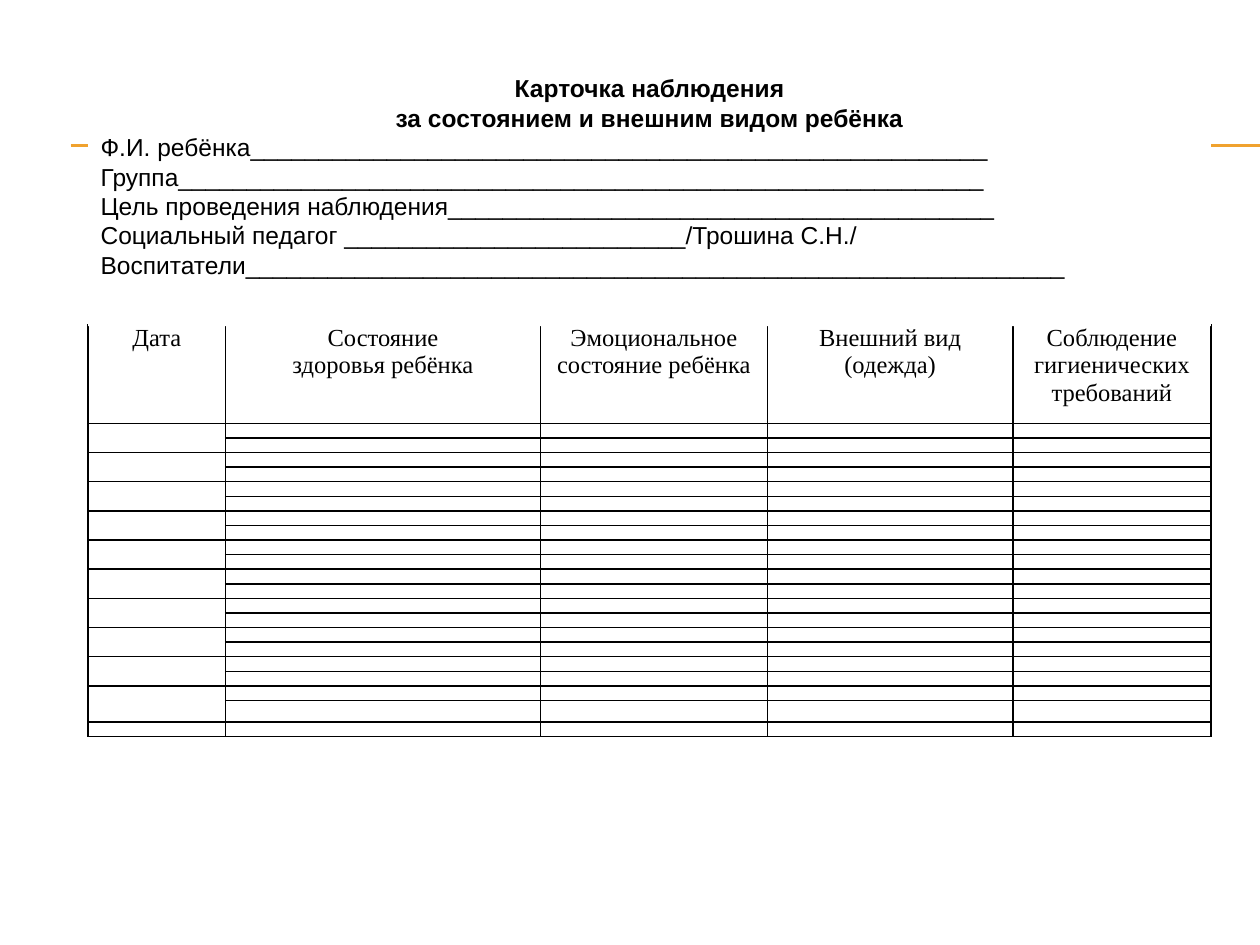
import dataclasses

import pptx
import pptx.dml.color
import pptx.enum.shapes
import pptx.enum.text
import pptx.oxml
import pptx.oxml.ns
import pptx.util

ALIGN = pptx.enum.text.PP_ALIGN


@dataclasses.dataclass(frozen=True)
class Theme:
    paper: str = "FFFFFF"
    ink: str = "000000"
    accent: str = "F0A22E"
    form_font: str = "Arial"
    table_font: str = "Times New Roman"
    text_size: float = 14
    line_pitch: float = 16.8
    empty_size: float = 6.8
    rule_width: float = 0.75
    border_width: float = 1


class CardSlide:
    """Places elements on a grid of 100 columns by 75 rows."""

    def __init__(self, deck, theme):
        self.theme = theme
        self.unit = deck.slide_width / 100
        self.page = deck.slides.add_slide(deck.slide_layouts[6])

    def grid(self, *cells):
        return [pptx.util.Emu(round(cell * self.unit)) for cell in cells]

    def color(self, value):
        return pptx.dml.color.RGBColor.from_string(value)

    def fill(self, target):
        target.fill.solid()
        target.fill.fore_color.rgb = self.color(self.theme.paper)

    def add_text(self, para, text, font, bold=False, align=ALIGN.LEFT):
        para.alignment = align
        span = para.add_run()
        span.text = text
        span.font.name = font
        span.font.size = pptx.util.Pt(self.theme.text_size)
        span.font.bold = bold
        span.font.color.rgb = self.color(self.theme.ink)

    def rule(self, left, right, row):
        line = self.page.shapes.add_connector(
            pptx.enum.shapes.MSO_CONNECTOR.STRAIGHT, *self.grid(left, row, right, row))
        line.line.color.rgb = self.color(self.theme.accent)
        line.line.width = pptx.util.Pt(self.theme.rule_width)
        line._element.spPr.append(pptx.oxml.parse_xml(
            f"<a:effectLst {pptx.oxml.ns.nsdecls('a')}/>"))

    def border(self, cell):
        width = pptx.util.Pt(self.theme.border_width)
        for position, side in enumerate(("lnL", "lnR", "lnT", "lnB")):
            cell._tc.get_or_add_tcPr().insert(position, pptx.oxml.parse_xml(
                f'<a:{side} {pptx.oxml.ns.nsdecls("a")} w="{width}"><a:solidFill>'
                f'<a:srgbClr val="{self.theme.ink}"/></a:solidFill></a:{side}>'))

    def cell(self, cell, lines):
        self.fill(cell)
        self.border(cell)
        cell.margin_left, cell.margin_right = self.grid(0.4, 0.4)
        cell.margin_top = cell.margin_bottom = 0
        frame = cell.text_frame
        for index, text in enumerate(lines):
            para = frame.add_paragraph() if index else frame.paragraphs[0]
            self.add_text(para, text, self.theme.table_font, align=ALIGN.CENTER)
        if not lines:
            # The end mark keeps empty rows low
            mark = frame.paragraphs[0]._p.get_or_add_endParaRPr()
            mark.set("sz", str(round(self.theme.empty_size * 100)))

    def table(self, left, top, widths, heights, header):
        frame = self.page.shapes.add_table(
            len(heights), len(widths), *self.grid(left, top, sum(widths), sum(heights)))
        table = frame.table
        table.first_row = table.horz_banding = False
        for column, width in zip(table.columns, self.grid(*widths)):
            column.width = width
        for row, height in zip(table.rows, self.grid(*heights)):
            row.height = height
        for row in range(len(heights)):
            for column in range(len(widths)):
                self.cell(table.cell(row, column), header[column] if row == 0 else [])
        return table

    def form(self, left, top, width, height, title, fields):
        box = self.page.shapes.add_shape(
            pptx.enum.shapes.MSO_SHAPE.RECTANGLE, *self.grid(left, top, width, height))
        box.shadow.inherit = False
        self.fill(box)
        box.line.fill.background()
        frame = box.text_frame
        frame.word_wrap = True
        frame.vertical_anchor = pptx.enum.text.MSO_ANCHOR.MIDDLE
        frame.margin_top, frame.margin_bottom = self.grid(3.5, 3.7)
        for index, text in enumerate(title + fields):
            para = frame.add_paragraph() if index else frame.paragraphs[0]
            para.line_spacing = pptx.util.Pt(self.theme.line_pitch)
            heading = index < len(title)
            self.add_text(para, text, self.theme.form_font, heading,
                          ALIGN.CENTER if heading else ALIGN.LEFT)


def main():
    deck = pptx.Presentation()
    deck.slide_width = pptx.util.Inches(10)
    deck.slide_height = pptx.util.Inches(7.5)
    card = CardSlide(deck, Theme())

    # Double accent rule behind the form
    for row in (11.5, 11.6):
        card.rule(5.6, 100, row)

    # Observation table: each date covers two rows
    header = [
        ["Дата"],
        ["Состояние", "здоровья ребёнка"],
        ["Эмоциональное", "состояние ребёнка"],
        ["Внешний вид", "(одежда)"],
        ["Соблюдение гигиенических требований"],
    ]
    heights = [7.8] + [0.7] * 19 + [1.7, 0.7]
    table = card.table(7, 25.8, [10.9, 25, 18, 19.5, 15.7], heights, header)
    for row in range(1, len(heights) - 1, 2):
        table.cell(row, 0).merge(table.cell(row + 1, 0))

    # Form heading and fields to fill in
    card.form(
        7, 2.3, 89.1, 23.6,
        ["Карточка наблюдения", "за состоянием и внешним видом ребёнка"],
        [
            "Ф.И. ребёнка" + "_" * 54,
            "Группа" + "_" * 59,
            "Цель проведения наблюдения" + "_" * 40,
            "Социальный педагог " + "_" * 25 + "/Трошина С.Н./",
            "Воспитатели" + "_" * 60,
        ])

    deck.save("out.pptx")


if __name__ == "__main__":
    main()
